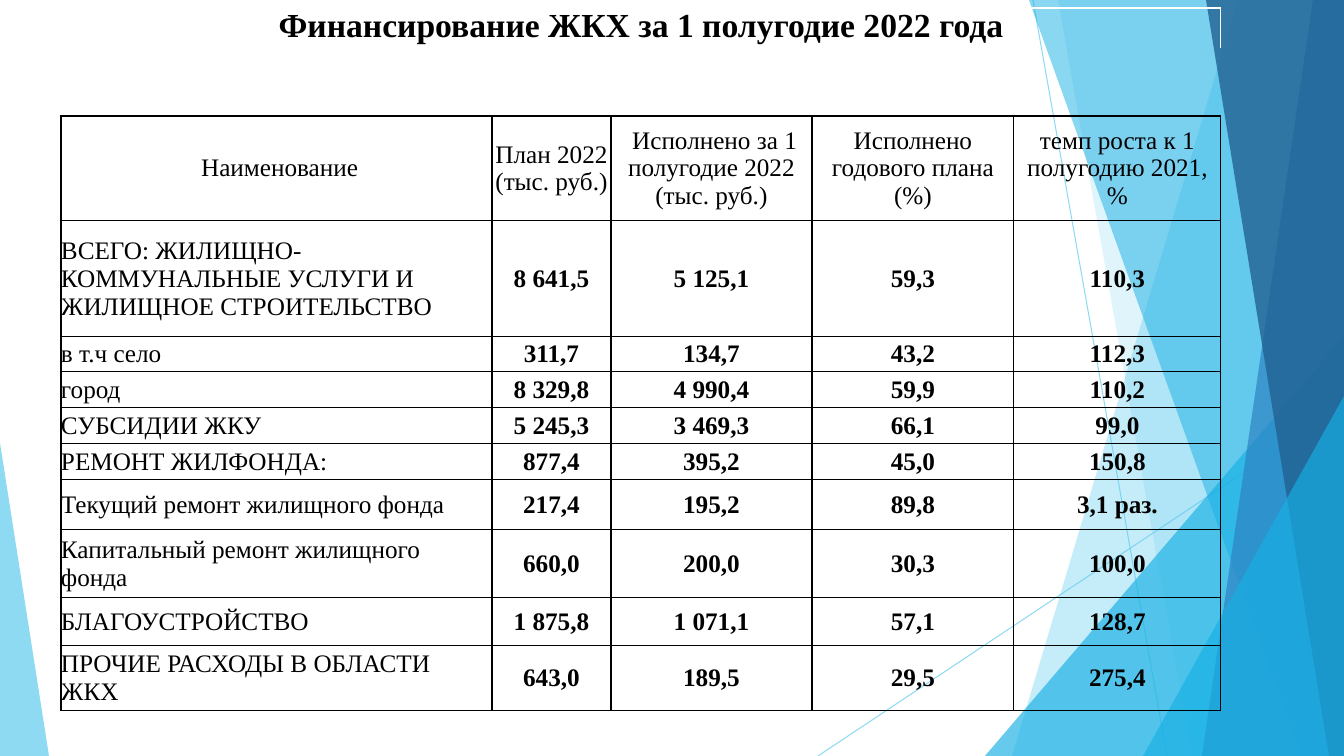
from lxml import etree
from pptx import Presentation
from pptx.dml.color import RGBColor
from pptx.enum.shapes import MSO_CONNECTOR, MSO_SHAPE
from pptx.enum.text import MSO_ANCHOR, PP_ALIGN
from pptx.oxml.ns import qn
from pptx.util import Emu, Pt

PX = 914400 / 100.8
WIDTH, HEIGHT = 1344, 756
COLORS = {"black": "000000", "white": "FFFFFF", "sky": "5FCBEF",
          "cyan": "17B0E4", "blue": "2E83C3", "navy": "226292"}
NO_STYLE = "{2D5ABB26-0587-4C30-8999-92F81FD0307C}"


def put_text(cell, text, size=18, bold=False, align=PP_ALIGN.CENTER, anchor=MSO_ANCHOR.MIDDLE):
    cell.margin_left = cell.margin_right = cell.margin_top = cell.margin_bottom = 0
    cell.vertical_anchor = anchor
    paragraph = cell.text_frame.paragraphs[0]
    paragraph.alignment = align
    if not text:
        paragraph._p.get_or_add_endParaRPr().set("sz", str(size * 100))
        return
    run = paragraph.add_run()
    run.text = text
    run.font.name = "Times New Roman"
    run.font.size = Pt(size)
    run.font.bold = bold
    run.font.color.rgb = RGBColor.from_string(COLORS["black"])


def set_opacity(color_format, color, percent):
    """Set a solid colour and add its alpha, which python-pptx does not offer."""
    color_format.rgb = RGBColor.from_string(COLORS[color])
    srgb = color_format._xFill.find(qn("a:srgbClr"))
    etree.SubElement(srgb, qn("a:alpha")).set("val", str(percent * 1000))


prs = Presentation()
prs.slide_width, prs.slide_height = Emu(round(WIDTH * PX)), Emu(round(HEIGHT * PX))
slide = prs.slides.add_slide(prs.slide_layouts[6])
shapes = slide.shapes

# Thin rays behind the facets
for ray in [(1033, 0, 1167, HEIGHT), (WIDTH, 406, 818, HEIGHT)]:
    line = shapes.add_connector(MSO_CONNECTOR.STRAIGHT, *(Emu(round(v * PX)) for v in ray))
    line.line.width = Pt(0.75)
    line.line.fill.solid()
    set_opacity(line.line.fill.fore_color, "sky", 70)
    etree.SubElement(line._element.spPr, qn("a:effectLst"))

# A band is (top x, bottom x) and runs to the right edge of the slide;
# a triangle is (left, top, width, height, apex position).
FACETS = [
    ((1238, 1012), "sky", 36),
    ((1058, 1192), "sky", 20),
    ((985, 336, 359, 420, 1), "cyan", 66),
    ((1029, 1301), "cyan", 50),
    ((1313, 1202), "blue", 70),
    ((1206, 1329), "navy", 80),
    ((1143, 396, 201, 360, 1), "cyan", 66),
    ((0, 443, 49, 313, 0), "sky", 70),
]
for geometry, color, opacity in FACETS:
    if len(geometry) == 2:
        top_x, bottom_x = geometry
        outline = shapes.build_freeform(top_x, 0, scale=PX)
        outline.add_line_segments([(WIDTH, 0), (WIDTH, HEIGHT), (bottom_x, HEIGHT)])
        facet = outline.convert_to_shape()
    else:
        *box, apex = geometry
        facet = shapes.add_shape(MSO_SHAPE.ISOSCELES_TRIANGLE, *(Emu(round(v * PX)) for v in box))
        facet.adjustments[0] = apex
    facet.shadow.inherit = False
    facet.line.fill.background()
    facet.fill.solid()
    set_opacity(facet.fill.fore_color, color, opacity)

COLUMN_WIDTHS = [431, 119, 201, 202, 207]
ROW_HEIGHTS = [40, 30, 38, 105, 116, 35, 36, 36, 36, 50, 68, 48, 65]
TITLE_ROW, HEADER_ROW = 0, 3
ROWS = [
    ["Финансирование ЖКХ за 1 полугодие 2022 года", "", "", "", ""],
    [""] * 5,
    [""] * 5,
    [" Наименование", "План 2022 (тыс. руб.)", " Исполнено за 1 полугодие 2022 (тыс. руб.)",
     "Исполнено годового плана (%)", "темп роста к 1 полугодию 2021, %"],
    ["ВСЕГО: ЖИЛИЩНО-КОММУНАЛЬНЫЕ УСЛУГИ И ЖИЛИЩНОЕ СТРОИТЕЛЬСТВО",
     "8 641,5", "5 125,1", "59,3", "110,3"],
    ["в т.ч село", "311,7", "134,7", "43,2", "112,3"],
    ["город", "8 329,8", "4 990,4", "59,9", "110,2"],
    ["СУБСИДИИ ЖКУ", "5 245,3", "3 469,3", "66,1", "99,0"],
    ["РЕМОНТ ЖИЛФОНДА:", "877,4", "395,2", "45,0", "150,8"],
    ["Текущий ремонт жилищного фонда", "217,4", "195,2", "89,8", "3,1 раз."],
    ["Капитальный ремонт жилищного фонда", "660,0", "200,0", "30,3", "100,0"],
    ["БЛАГОУСТРОЙСТВО", "1 875,8", "1 071,1", "57,1", "128,7"],
    ["ПРОЧИЕ РАСХОДЫ В ОБЛАСТИ ЖКХ", "643,0", "189,5", "29,5", "275,4"],
]
frame = (61, 8, sum(COLUMN_WIDTHS), sum(ROW_HEIGHTS))
financing = shapes.add_table(len(ROWS), len(COLUMN_WIDTHS),
                             *(Emu(round(v * PX)) for v in frame)).table
financing.first_row = financing.horz_banding = False
financing._tbl.tblPr.find(qn("a:tableStyleId")).text = NO_STYLE
for column, width in zip(financing.columns, COLUMN_WIDTHS):
    column.width = Emu(round(width * PX))
for row, height in zip(financing.rows, ROW_HEIGHTS):
    row.height = Emu(round(height * PX))
financing.cell(TITLE_ROW, 0).merge(financing.cell(TITLE_ROW, len(COLUMN_WIDTHS) - 1))

for r, texts in enumerate(ROWS):
    for c, text in enumerate(texts):
        cell = financing.cell(r, c)
        if r == TITLE_ROW:
            put_text(cell, text, size=24, bold=True, anchor=MSO_ANCHOR.TOP)
            edges, edge_color = "LRT", "white"
        elif r < HEADER_ROW:
            put_text(cell, text, size=12)
            edges, edge_color = ("B" if r == HEADER_ROW - 1 else ""), "black"
        else:
            is_name = c == 0 and r > HEADER_ROW
            put_text(cell, text, bold=c > 0 and r > HEADER_ROW,
                     align=PP_ALIGN.LEFT if is_name else PP_ALIGN.CENTER)
            edges, edge_color = "LRTB", "black"
        for side in "LRTB":
            border = etree.SubElement(cell._tc.get_or_add_tcPr(), qn(f"a:ln{side}"))
            border.set("w", str(Pt(1)))
            if side in edges:
                paint = etree.SubElement(border, qn("a:solidFill"))
                etree.SubElement(paint, qn("a:srgbClr")).set("val", COLORS[edge_color])
            else:
                etree.SubElement(border, qn("a:noFill"))
        cell.fill.background()

prs.save("out.pptx")
